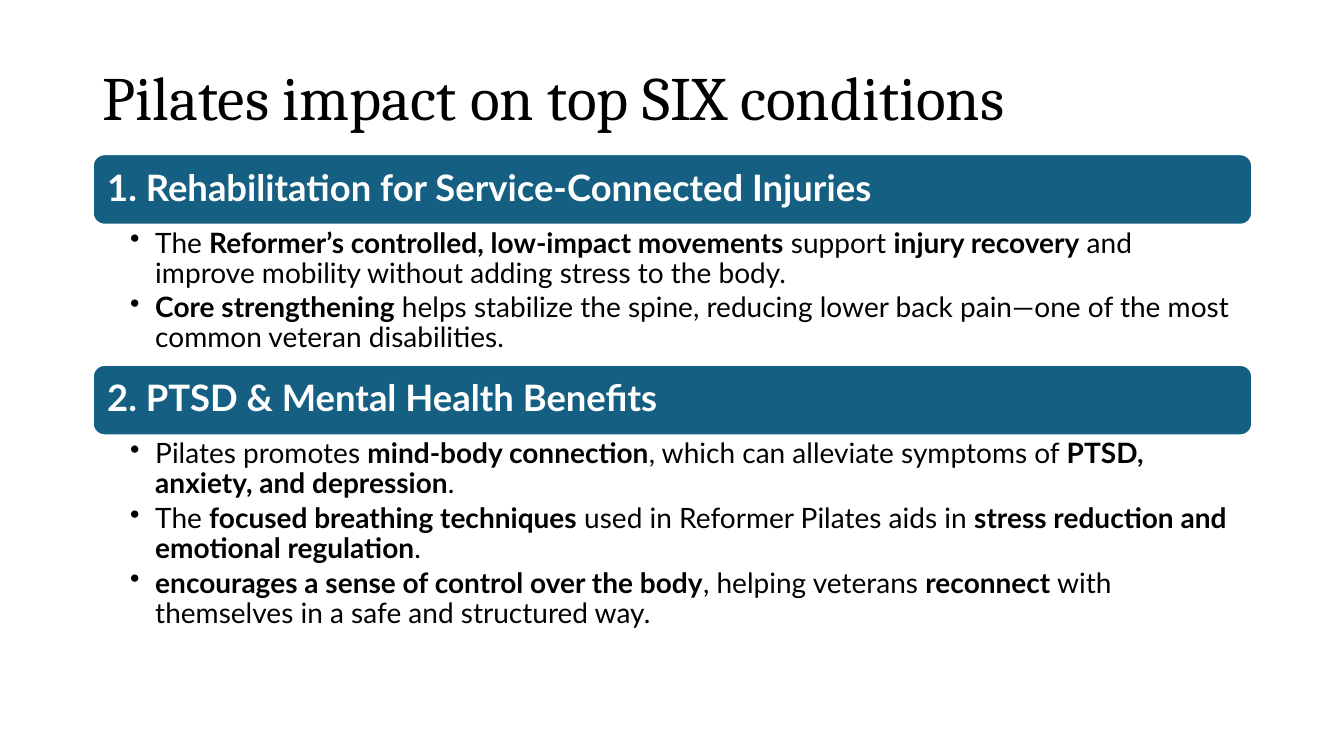
from lxml import etree
from pptx import Presentation
from pptx.dml.color import RGBColor
from pptx.enum.shapes import MSO_SHAPE as SHAPE
from pptx.enum.text import MSO_ANCHOR as ANCHOR, PP_ALIGN as ALIGN
from pptx.oxml.ns import qn
from pptx.util import Inches, Pt

BLACK = RGBColor(0x00, 0x00, 0x00)
WHITE = RGBColor(0xFF, 0xFF, 0xFF)
TEAL = RGBColor(0x15, 0x60, 0x82)

LEFT, WIDTH = 0.92, 11.5
BAR_HEIGHT = 0.7

# Each section: top of its bar, heading, height of the list, bullets (** marks bold)
SECTIONS = [
    (1.53, "1. Rehabilitation for Service-Connected Injuries", 1.38, [
        "The **Reformer’s controlled, low-impact movements** support "
        "**injury recovery** and improve mobility without adding stress to the body.",
        "**Core strengthening** helps stabilize the spine, reducing lower back "
        "pain—one of the most common veteran disabilities.",
    ]),
    (3.62, "2. PTSD & Mental Health Benefits", 2.06, [
        "Pilates promotes **mind-body connection**, which can alleviate symptoms of "
        "**PTSD, anxiety, and depression**.",
        "The **focused breathing techniques** used in Reformer Pilates aids in "
        "**stress reduction and emotional regulation**.",
        "**encourages a sense of control over the body**, helping veterans "
        "**reconnect** with themselves in a safe and structured way.",
    ]),
]


def style(font, name, size, color, bold=False):
    font.name, font.size, font.bold = name, Pt(size), bold
    font.color.rgb = color


def set_insets(tf, left, right, vertical):
    tf.word_wrap = True
    tf.margin_left, tf.margin_right = Inches(left), Inches(right)
    tf.margin_top = tf.margin_bottom = Inches(vertical)


prs = Presentation()
prs.slide_width, prs.slide_height = Inches(13.33), Inches(7.5)
s = prs.slides.add_slide(prs.slide_layouts[5])

# Title
title = s.shapes.title
title.left, title.top = Inches(LEFT), Inches(0.4)
title.width, title.height = Inches(WIDTH), Inches(1.19)
tf = title.text_frame
tf.text = "Pilates impact on top SIX conditions"
tf.vertical_anchor = ANCHOR.MIDDLE
p = tf.paragraphs[0]
p.alignment, p.line_spacing = ALIGN.LEFT, 0.9
style(p.runs[0].font, "Cambria", 44, BLACK)

for top, heading, list_height, bullets in SECTIONS:
    # Heading bar
    sp = s.shapes.add_shape(SHAPE.ROUNDED_RECTANGLE, Inches(LEFT), Inches(top),
                            Inches(WIDTH), Inches(BAR_HEIGHT))
    sp.shadow.inherit = False
    sp.fill.solid()
    sp.fill.fore_color.rgb = TEAL
    sp.line.color.rgb = WHITE
    sp.line.width = Pt(1.5)
    tf = sp.text_frame
    set_insets(tf, 0.11, 0.11, 0.11)
    tf.vertical_anchor = ANCHOR.MIDDLE
    tf.text = heading
    p = tf.paragraphs[0]
    p.alignment, p.line_spacing = ALIGN.LEFT, 0.9
    style(p.runs[0].font, "Lato", 26, WHITE, bold=True)

    # Bullet list
    box = s.shapes.add_textbox(Inches(LEFT), Inches(top + BAR_HEIGHT),
                               Inches(WIDTH), Inches(list_height))
    tf = box.text_frame
    set_insets(tf, 0.37, 0.2, 0.04)
    for i, bullet in enumerate(bullets):
        p = tf.add_paragraph() if i else tf.paragraphs[0]
        p.level = 1
        pPr = p._p.get_or_add_pPr()
        pPr.set("marL", str(Inches(0.25)))
        pPr.set("indent", str(-Inches(0.25)))
        etree.SubElement(pPr, qn("a:buChar")).set("char", "•")
        p.line_spacing, p.space_after = 0.9, Pt(3)
        for j, part in enumerate(bullet.split("**")):
            if part:
                r = p.add_run()
                r.text = part
                style(r.font, "Lato", 20, BLACK, bold=j % 2 == 1)

prs.save("out.pptx")
